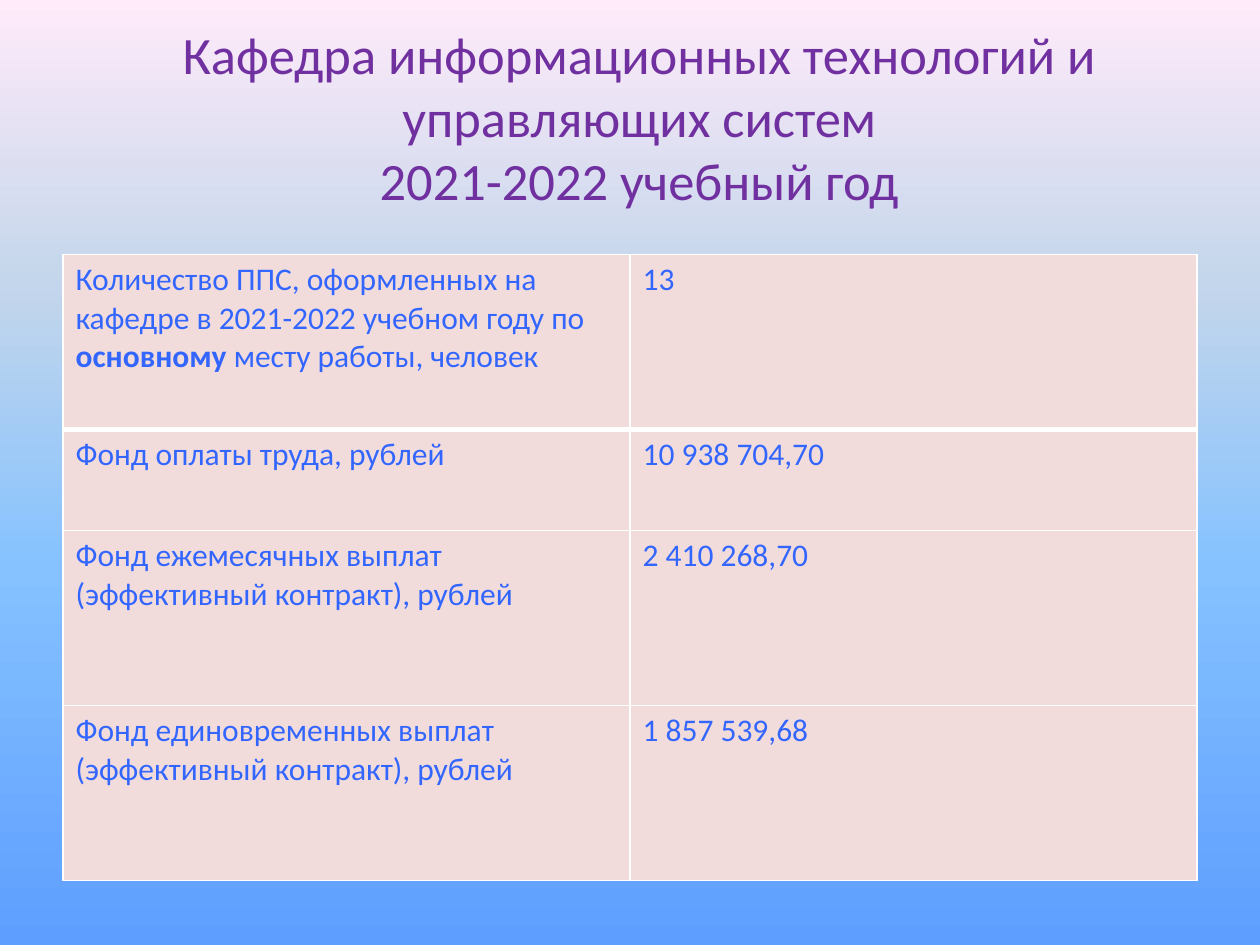
from dataclasses import dataclass

from lxml import etree
from pptx import Presentation
from pptx.dml.color import RGBColor
from pptx.enum.text import MSO_ANCHOR, PP_ALIGN
from pptx.oxml.ns import qn
from pptx.util import Inches, Pt

ANCHOR_MIDDLE = MSO_ANCHOR.MIDDLE
ALIGN_CENTER = PP_ALIGN.CENTER
BLANK_LAYOUT = 6


@dataclass(frozen=True)
class Theme:
    font: str = "Calibri"
    title_size: int = 30
    cell_size: int = 18
    title_color: str = "7030A0"
    cell_color: str = "3366FF"
    cell_fill: str = "F2DCDB"
    border_color: str = "FFFFFF"
    border_width: int = 1
    first_row_border_width: int = 3
    background_stops: tuple = (
        (0, "5E9EFF"), (40, "85C2FF"), (70, "C4D6EB"), (100, "FFEBFA"),
    )


THEME = Theme()

TITLE_LINES = (
    "Кафедра информационных технологий и управляющих систем",
    "2021-2022 учебный год",
)

# Each label is a list of (text, bold) pieces.
TABLE_ROWS = (
    ([("Количество ППС, оформленных на кафедре в 2021-2022 учебном году по ", False),
      ("основному", True),
      (" месту работы, человек", False)], "13"),
    ([("Фонд оплаты труда, рублей", False)], "10 938 704,70"),
    ([("Фонд ежемесячных выплат (эффективный контракт), рублей", False)],
     "2 410 268,70"),
    ([("Фонд единовременных выплат (эффективный контракт), рублей", False)],
     "1 857 539,68"),
)
ROW_HEIGHTS = (1.39, 0.8, 1.39, 1.39)
COLUMN_WIDTH = 4.5


def set_background(slide):
    """Fill the slide with a vertical gradient running from bottom to top."""
    fill = slide.background.fill
    fill.gradient()
    fill.gradient_angle = 90
    stop_list = slide.element.find(".//" + qn("a:gsLst"))
    for stop in list(stop_list):
        stop_list.remove(stop)
    for percent, color in THEME.background_stops:
        stop = etree.SubElement(stop_list, qn("a:gs"), pos=str(percent * 1000))
        etree.SubElement(stop, qn("a:srgbClr"), val=color)


def style_font(font, size, color):
    font.name = THEME.font
    font.size = Pt(size)
    font.color.rgb = RGBColor.from_string(color)


def add_title(slide):
    box = slide.shapes.add_textbox(Inches(0.5), Inches(0.3), Inches(9.15), Inches(1.25))
    frame = box.text_frame
    frame.word_wrap = True
    frame.vertical_anchor = ANCHOR_MIDDLE
    paragraph = frame.paragraphs[0]
    paragraph.alignment = ALIGN_CENTER
    paragraph.text = "\v".join(TITLE_LINES)
    style_font(paragraph.font, THEME.title_size, THEME.title_color)


def set_borders(cell, top_width, bottom_width):
    properties = cell._tc.get_or_add_tcPr()
    widths = {"L": THEME.border_width, "R": THEME.border_width,
              "T": top_width, "B": bottom_width}
    for side, width in widths.items():
        line = etree.SubElement(properties, qn("a:ln" + side), w=str(Pt(width)))
        fill = etree.SubElement(line, qn("a:solidFill"))
        etree.SubElement(fill, qn("a:srgbClr"), val=THEME.border_color)


def fill_cell(cell, pieces):
    paragraph = cell.text_frame.paragraphs[0]
    for text, bold in pieces:
        run = paragraph.add_run()
        run.text = text
        if bold:
            run.font.bold = True
    style_font(paragraph.font, THEME.cell_size, THEME.cell_color)
    cell.fill.solid()
    cell.fill.fore_color.rgb = RGBColor.from_string(THEME.cell_fill)


def add_funding_table(slide):
    table = slide.shapes.add_table(
        len(TABLE_ROWS), 2, Inches(0.5), Inches(2.02),
        Inches(2 * COLUMN_WIDTH), Inches(sum(ROW_HEIGHTS)),
    ).table
    table.first_row = False
    table.horz_banding = False
    for column in table.columns:
        column.width = Inches(COLUMN_WIDTH)
    for row_index, (label, value) in enumerate(TABLE_ROWS):
        table.rows[row_index].height = Inches(ROW_HEIGHTS[row_index])
        top_width = THEME.first_row_border_width if row_index == 1 else THEME.border_width
        bottom_width = THEME.first_row_border_width if row_index == 0 else THEME.border_width
        for column_index, pieces in enumerate((label, [(value, False)])):
            cell = table.cell(row_index, column_index)
            set_borders(cell, top_width, bottom_width)
            fill_cell(cell, pieces)


def main():
    presentation = Presentation()
    presentation.slide_width = Inches(10)
    presentation.slide_height = Inches(7.5)
    slide = presentation.slides.add_slide(presentation.slide_layouts[BLANK_LAYOUT])
    set_background(slide)
    add_title(slide)
    add_funding_table(slide)
    presentation.save("out.pptx")


if __name__ == "__main__":
    main()
